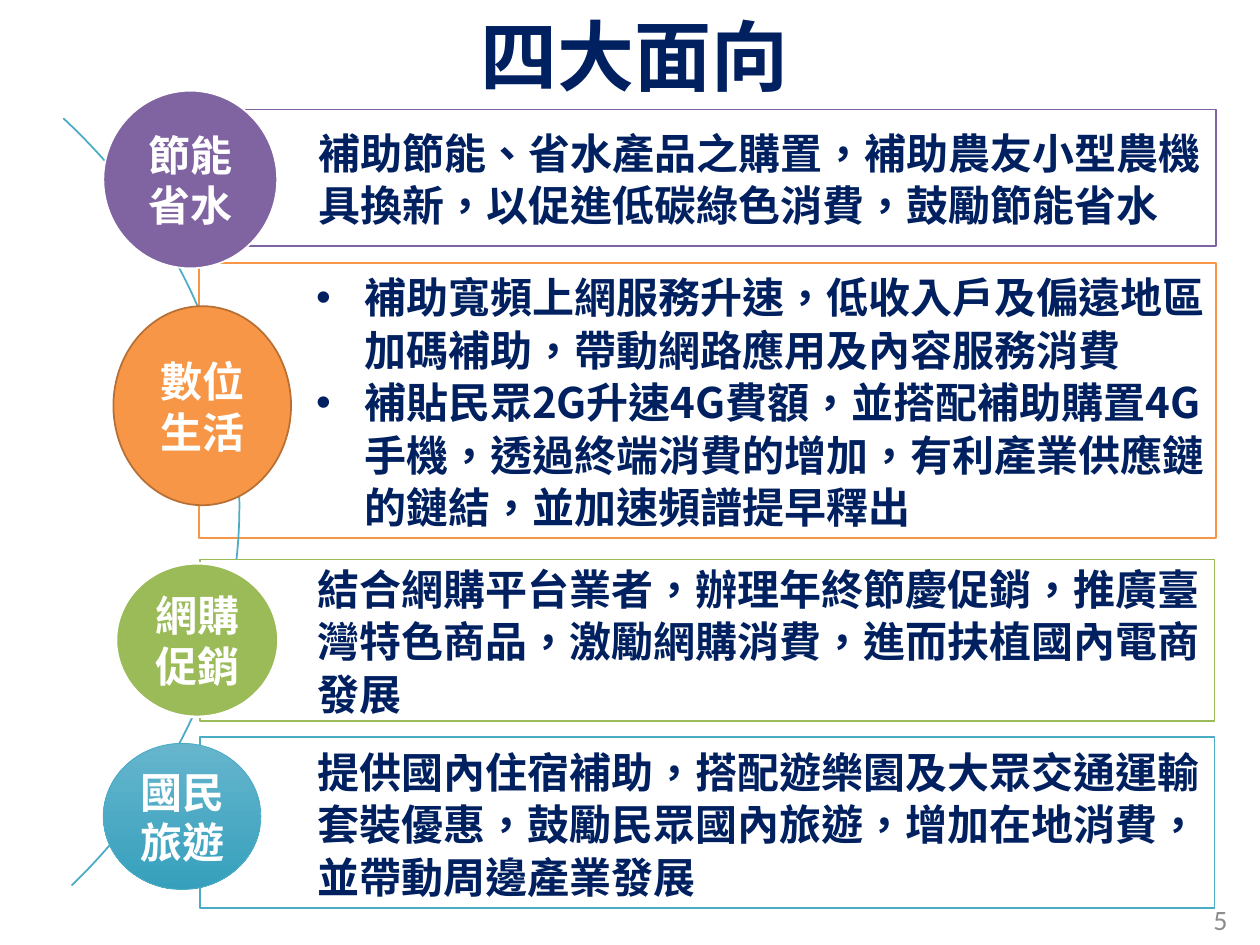
from lxml import etree
from pptx import Presentation
from pptx.dml.color import RGBColor
from pptx.enum.shapes import MSO_SHAPE as Shape
from pptx.enum.text import MSO_ANCHOR as Anchor, PP_ALIGN as Align
from pptx.oxml.ns import qn
from pptx.util import Inches, Pt

WHITE = RGBColor(0xFF, 0xFF, 0xFF)
NAVY = RGBColor(0x00, 0x20, 0x60)
GREY = RGBColor(0x8C, 0x8C, 0x8C)
PURPLE = RGBColor(0x80, 0x64, 0xA2)
ORANGE = RGBColor(0xF7, 0x96, 0x46)
BROWN = RGBColor(0xB7, 0x6F, 0x34)
GREEN = RGBColor(0x9B, 0xBB, 0x59)
TEAL = RGBColor(0x4B, 0xAC, 0xC6)
LIGHT_TEAL = RGBColor(0x66, 0xB5, 0xCD)
DARK_TEAL = RGBColor(0x36, 0xA0, 0xBC)
CJK = "Noto Sans CJK SC"

TITLE = "四大面向"
PAGE_NUMBER = "5"
DIGITAL = {
    "label": "數位生活",
    "points": [
        "補助寬頻上網服務升速，低收入戶及偏遠地區加碼補助，帶動網路應用及內容服務消費",
        "補貼民眾2G升速4G費額，並搭配補助購置4G手機，透過終端消費的增加，有利產業供應鏈的鏈結，並加速頻譜提早釋出",
    ],
    "color": ORANGE, "panel": (1.58, 2.09, 8.07, 2.18),
    "circle": (0.9, 2.43, 1.41, 1.58), "fill": [ORANGE], "outline": (BROWN, 1),
}
SAVING = {
    "label": "節能省水",
    "points": ["補助節能、省水產品之購置，補助農友小型農機具換新，以促進低碳綠色消費，鼓勵節能省水"],
    "color": PURPLE, "panel": (1.6, 0.87, 8.05, 1.08),
    "circle": (0.82, 0.72, 1.38, 1.41), "fill": [PURPLE], "outline": (WHITE, 1),
}
SHOPPING = {
    "label": "網購促銷",
    "points": ["結合網購平台業者，辦理年終節慶促銷，推廣臺灣特色商品，激勵網購消費，進而扶植國內電商發展"],
    "color": GREEN, "panel": (1.59, 4.44, 8.05, 1.28),
    "circle": (0.92, 4.47, 1.29, 1.22), "fill": [GREEN], "outline": (WHITE, 1.5),
}
TRAVEL = {
    "label": "國民旅遊",
    "points": ["提供國內住宿補助，搭配遊樂園及大眾交通運輸套裝優惠，鼓勵民眾國內旅遊，增加在地消費，並帶動周邊產業發展"],
    "color": TEAL, "panel": (1.59, 5.85, 8.05, 1.36),
    "circle": (0.82, 5.9, 1.25, 1.16), "fill": [LIGHT_TEAL, DARK_TEAL], "outline": (TEAL, 0.5),
}
PANEL_INSETS = {"margin_left": 0.93, "margin_top": 0.06, "margin_right": 0.06, "margin_bottom": 0.06}
HANGING = Inches(0.38)


def add_outlined(slide, kind, place, fills, outline):
    shape = slide.shapes.add_shape(kind, *map(Inches, place))
    shape.shadow.inherit = False
    if len(fills) > 1:
        shape.fill.gradient()
        shape.fill.gradient_angle = 270
        for stop, color in zip(shape.fill.gradient_stops, fills):
            stop.color.rgb = color
    elif fills:
        shape.fill.solid()
        shape.fill.fore_color.rgb = fills[0]
    else:
        shape.fill.background()
    color, width = outline
    shape.line.color.rgb = color
    shape.line.width = Pt(width)
    return shape


def write(shape, texts, size, color, align, spacing=None, font=CJK, bold=True):
    frame = shape.text_frame
    frame.word_wrap = True
    frame.vertical_anchor = Anchor.MIDDLE
    for index, text in enumerate(texts):
        paragraph = frame.add_paragraph() if index else frame.paragraphs[0]
        paragraph.alignment = align
        if spacing:
            paragraph.line_spacing = Pt(spacing)
        run = paragraph.add_run()
        run.text = text
        run.font.color.rgb = color
        for name, value in {"size": Pt(size), "bold": bold, "name": font}.items():
            setattr(run.font, name, value)
        properties = run._r.get_or_add_rPr()
        properties.set("lang", "zh-TW")
        etree.SubElement(properties, qn("a:ea")).set("typeface", font)


def add_bullets(shape):
    for paragraph in shape.text_frame.paragraphs:
        properties = paragraph._p.get_or_add_pPr()
        properties.set("marL", str(HANGING))
        properties.set("indent", str(-HANGING))
        etree.SubElement(properties, qn("a:buFont")).set("typeface", "Arial")
        etree.SubElement(properties, qn("a:buChar")).set("char", "•")


def add_panel(slide, aspect):
    panel = add_outlined(slide, Shape.RECTANGLE, aspect["panel"], [WHITE], (aspect["color"], 1))
    for side, inset in PANEL_INSETS.items():
        setattr(panel.text_frame, side, Inches(inset))
    write(panel, aspect["points"], 24, NAVY, Align.LEFT, 30)
    if len(aspect["points"]) > 1:
        add_bullets(panel)


def add_circle(slide, aspect):
    circle = add_outlined(slide, Shape.OVAL, aspect["circle"], aspect["fill"], aspect["outline"])
    write(circle, [aspect["label"]], 24, WHITE, Align.CENTER, 29)


def main():
    deck = Presentation()
    deck.slide_width, deck.slide_height = Inches(10), Inches(7.5)
    slide = deck.slides.add_slide(deck.slide_layouts[6])

    add_panel(slide, DIGITAL)
    arc = add_outlined(slide, Shape.BLOCK_ARC, (-8.53, -0.5, 10.43, 9.03), [], (TEAL, 1))
    for index, value in enumerate((192.72, 22.65, 0)):
        arc.adjustments[index] = value
    add_panel(slide, SAVING)
    add_circle(slide, SAVING)

    title = slide.shapes.add_textbox(*map(Inches, (0.08, -0.03, 9.92, 0.92)))
    write(title, [TITLE], 44, NAVY, Align.CENTER)
    number = slide.shapes.add_textbox(*map(Inches, (7.45, 7.1, 2.39, 0.4)))
    write(number, [PAGE_NUMBER], 16, GREY, Align.RIGHT, font="Calibri", bold=False)

    add_circle(slide, DIGITAL)
    for aspect in (SHOPPING, TRAVEL):
        add_panel(slide, aspect)
        add_circle(slide, aspect)
    deck.save("out.pptx")


if __name__ == "__main__":
    main()
